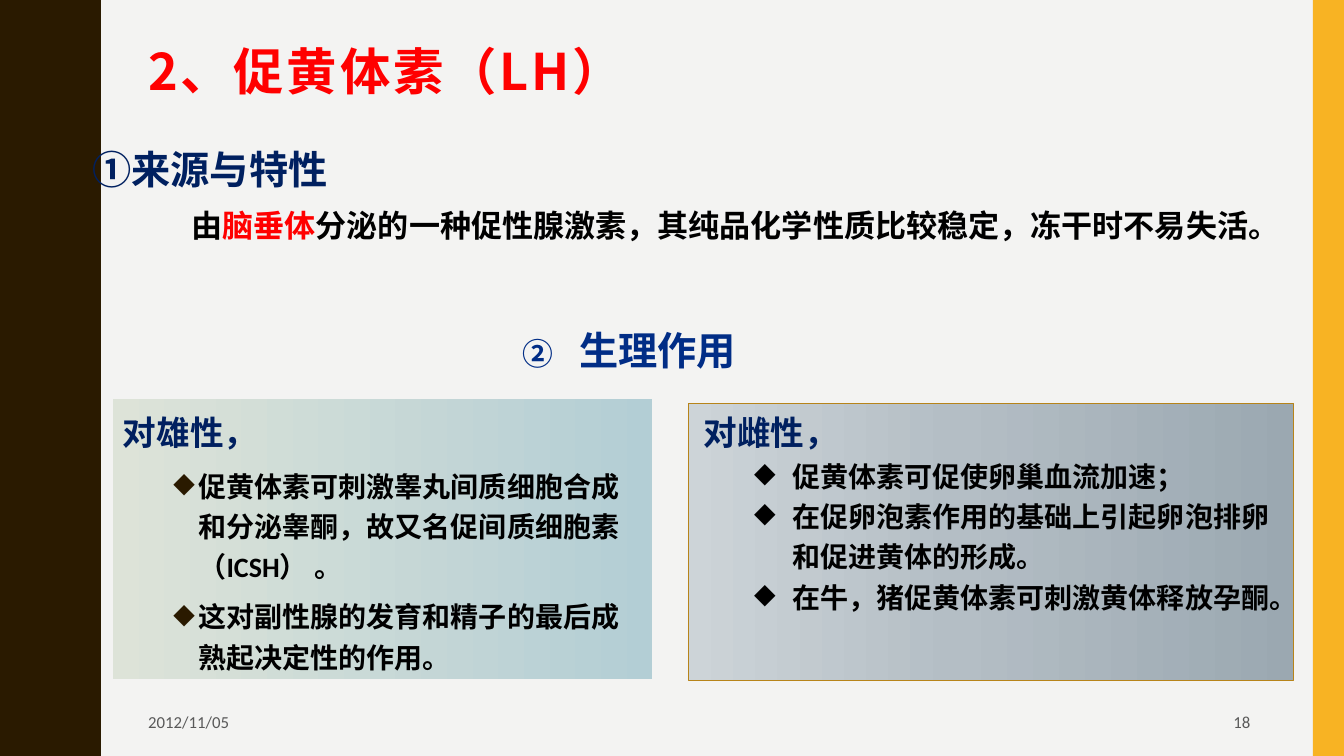
import copy
import pptx
import pptx.util
import pptx.dml.color
import pptx.enum.shapes
import pptx.enum.text
import pptx.oxml.ns
import lxml.etree

Inches = pptx.util.Inches
Pt = pptx.util.Pt
qn = pptx.oxml.ns.qn
NOTO, CAL = "Noto Sans CJK SC", "Calibri"
RED, NAVY, BLACK, GREY, BROWN = "FF0000", "002060", "000000", "595959", "2A1A00"

HEAD = dict(size=24, color=NAVY, ls=1.2, before=15)
ITEM = dict(size=20, face=CAL, ls=1.2, bullet="◆", level=1)
MALE = dict(ITEM, before=7, indent=(0.75, -0.25), tint=BROWN)
FEMALE = dict(ITEM, indent=(0.88, -0.38))
FOOT = dict(size=12, face=CAL, color=GREY, bold=False)
DEEP = [(0, "012D86"), (1, "0E2557")]

PANELS = [
    ((13.02, 0, 0.31, 7.5), "F8B323", None),
    ((6.83, 4, 6, 2.75), [(0, "CDD4D8"), (0.44, "B4BEC5"), (1, "9BA8B1")], "B7841A"),
    ((1.12, 3.96, 5.35, 2.78), [(0, "DDE3D8"), (1, "B3CED5")], None),
]
TEXTS = [
    ((1.37, 0.42, 11.13, 0.65), "top", [
        (["2、促黄体素（LH）"], dict(size=36, color=RED, ls=0.9, spc=200))]),
    ((1.12, 3.96, 5.35, 2.78), "top", [
        (["对雄性，"], HEAD),
        (["促黄体素可刺激睾丸间质细胞合成和分泌睾酮，故又名促间质细胞素（ICSH） 。"], MALE),
        (["这对副性腺的发育和精子的最后成熟起决定性的作用。"], MALE)]),
    ((1.37, 6.97, 2.55, 0.38), "middle", [(["2012/11/05"], FOOT)]),
    ((9.42, 6.97, 3.08, 0.38), "middle", [(["18"], dict(FOOT, align="right"))]),
    ((5.08, 3.31, 2.35, 0.45), "middle", [
        ([(" ", dict(size=22)), "生理作用"],
         dict(size=28, color=DEEP, ls=Pt(25), number=2, indent=(0.5, -0.5)))]),
    ((1.8, 1.96, 11.52, 0.81), "top", [
        (["由", ("脑垂体", dict(color=RED)),
          "分泌的一种促性腺激素，其纯品化学性质比较稳定，冻干时不易失活。"],
         dict(size=22.2, ls=1.1, before=7))]),
    ((0.82, 1.39, 4, 0.57), "top", [
        (["来源与特性"], dict(size=28, color=NAVY, number=1, indent=(0.38, -0.38)))]),
    ((6.88, 3.96, 5.89, 2.2), "top", [
        (["对雌性，"], HEAD),
        (["促黄体素可促使卵巢血流加速；"], FEMALE),
        (["在促卵泡素作用的基础上引起卵泡排卵和促进黄体的形成。"], FEMALE),
        (["在牛，猪促黄体素可刺激黄体释放孕酮。"], FEMALE)]),
]
BEND = [(0.78, 0), (0.78, 0.07), (0.79, 0.14), (0.8, 0.2), (0.81, 0.25),
        (0.83, 0.29), (0.85, 0.33), (0.87, 0.38), (0.89, 0.42), (0.91, 0.46),
        (0.93, 0.5), (0.95, 0.55), (0.96, 0.61), (0.97, 0.68)]
WAVE = 1.5

deck = pptx.Presentation()
deck.slide_width, deck.slide_height = Inches(13.33), Inches(7.5)
slide = deck.slides.add_slide(deck.slide_layouts[6])


def rgb(code):
    return pptx.dml.color.RGBColor.from_string(code)


def paint(fill, look, node=None):
    if isinstance(look, str):
        fill.solid()
        fill.fore_color.rgb = rgb(look)
        return
    fill.gradient()
    fill.gradient_angle = 0
    if node is not None:
        stops = next(node.iter(qn("a:gsLst")))
        for _ in look[2:]:
            stops.append(copy.deepcopy(stops[-1]))
    for stop, (place, code) in zip(fill.gradient_stops, look):
        stop.position = place
        stop.color.rgb = rgb(code)


def finish(shape, look, edge=None):
    shape.shadow.inherit = False
    paint(shape.fill, look, shape.element)
    if edge:
        paint(shape.line.fill, edge)
        shape.line.width = Pt(1)
    else:
        shape.line.fill.background()


def add(node, tag, **attrs):
    return lxml.etree.SubElement(node, qn(tag), attrs)


def mark(para, style):
    props = para._p.get_or_add_pPr()
    if "indent" in style:
        for key, size in zip(("marL", "indent"), style["indent"]):
            props.set(key, str(Inches(size)))
    if "tint" in style:
        add(add(props, "a:buClr"), "a:srgbClr", val=style["tint"])
    if "bullet" in style:
        add(props, "a:buChar", char=style["bullet"])
    if "number" in style:
        add(props, "a:buAutoNum", type="circleNumDbPlain", startAt=str(style["number"]))


def write(para, parts, style):
    traits = dict(level=style.get("level", 0), line_spacing=style.get("ls"),
                  space_before=Pt(style.get("before", 0)))
    if "align" in style:
        traits["alignment"] = pptx.enum.text.PP_ALIGN.RIGHT
    for key, value in traits.items():
        setattr(para, key, value)
    mark(para, style)
    for part in parts:
        words, extra = (part, {}) if isinstance(part, str) else part
        look = {**style, **extra}
        run = para.add_run()
        run.text = words
        font = dict(size=Pt(look["size"]), bold=look.get("bold", True),
                    name=look.get("face", NOTO))
        for key, value in font.items():
            setattr(run.font, key, value)
        paint(run.font.fill, look.get("color", BLACK))
        props = run._r.get_or_add_rPr()
        add(props, "a:ea", typeface=NOTO)
        if "spc" in look:
            props.set("spc", str(look["spc"]))


paint(slide.background.fill, "F3F3F2")

cycle = BEND + [(x, WAVE - y) for x, y in [(0.97, WAVE / 2)] + BEND[:0:-1]]
curve = [(x, y + turn * WAVE) for turn in range(5) for x, y in cycle]
pen = slide.shapes.build_freeform(0, 0, scale=Inches(1))
pen.add_line_segments(curve + [(0.78, 7.5), (0, 7.5)], close=True)
finish(pen.convert_to_shape(), BROWN)

for box, look, edge in PANELS:
    rect = slide.shapes.add_shape(pptx.enum.shapes.MSO_SHAPE.RECTANGLE, *map(Inches, box))
    finish(rect, look, edge)

for box, place, paras in TEXTS:
    frame = slide.shapes.add_textbox(*map(Inches, box)).text_frame
    frame.word_wrap = True
    frame.vertical_anchor = pptx.enum.text.MSO_ANCHOR[place.upper()]
    for i, (parts, style) in enumerate(paras):
        write(frame.add_paragraph() if i else frame.paragraphs[0], parts, style)

deck.save("out.pptx")
